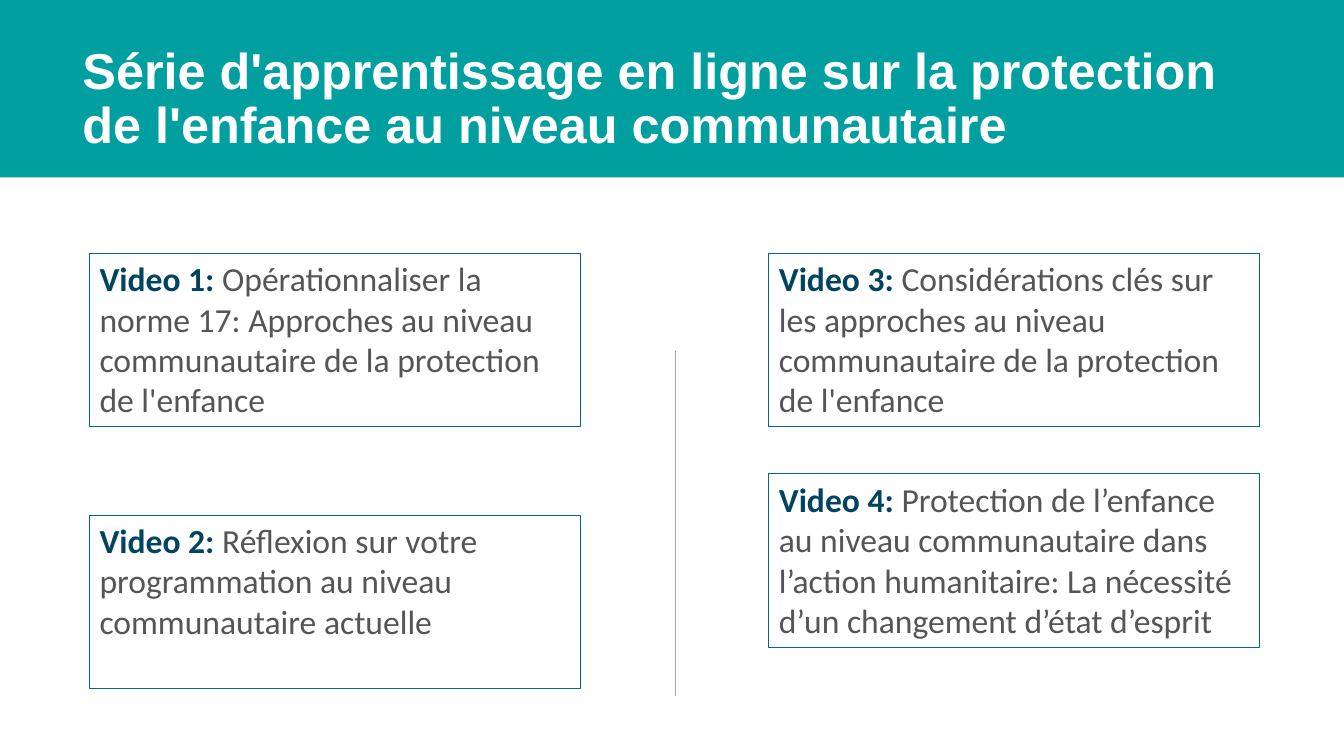
from dataclasses import dataclass

from lxml import etree
from pptx import Presentation
from pptx.dml.color import RGBColor
from pptx.enum.shapes import MSO_CONNECTOR, MSO_SHAPE
from pptx.enum.text import MSO_ANCHOR, PP_ALIGN
from pptx.oxml.ns import qn
from pptx.shapes.autoshape import Shape
from pptx.slide import Slide
from pptx.text.text import TextFrame
from pptx.util import Cm, Pt

RECTANGLE = MSO_SHAPE.RECTANGLE
STRAIGHT = MSO_CONNECTOR.STRAIGHT
TOP = MSO_ANCHOR.TOP
MIDDLE = MSO_ANCHOR.MIDDLE
LEFT = PP_ALIGN.LEFT


@dataclass(frozen=True)
class Theme:
    band: RGBColor = RGBColor.from_string("029FA0")
    heading: RGBColor = RGBColor.from_string("FFFFFF")
    border: RGBColor = RGBColor.from_string("026694")
    label: RGBColor = RGBColor.from_string("014462")
    body: RGBColor = RGBColor.from_string("545554")
    divider: RGBColor = RGBColor.from_string("A6A6A6")
    heading_font: str = "Arial"
    body_font: str = "Calibri"
    heading_size: int = 36
    body_size: int = 24


@dataclass(frozen=True)
class Video:
    number: int
    title: str
    left: float
    top: float


THEME = Theme()
SLIDE_WIDTH, SLIDE_HEIGHT = 33.87, 19.05
BAND_HEIGHT = 4.47
CARD_WIDTH, CARD_HEIGHT = 12.37, 4.37
LEFT_COLUMN, RIGHT_COLUMN = 2.26, 19.38
FIRST_ROW = 6.38
HEADING = (
    "Série d'apprentissage en ligne sur la protection "
    "de l'enfance au niveau communautaire"
)
VIDEOS = [
    Video(
        1,
        "Opérationnaliser la norme 17: Approches au niveau communautaire "
        "de la protection de l'enfance",
        LEFT_COLUMN,
        FIRST_ROW,
    ),
    Video(
        2,
        "Réflexion sur votre programmation au niveau communautaire actuelle",
        LEFT_COLUMN,
        12.98,
    ),
    Video(
        3,
        "Considérations clés sur les approches au niveau communautaire "
        "de la protection de l'enfance",
        RIGHT_COLUMN,
        FIRST_ROW,
    ),
    Video(
        4,
        "Protection de l’enfance au niveau communautaire dans l’action "
        "humanitaire: La nécessité d’un changement d’état d’esprit",
        RIGHT_COLUMN,
        11.94,
    ),
]


def write(
    frame: TextFrame,
    text: str,
    *,
    font: str,
    size: int,
    color: RGBColor,
    bold: bool = False,
    spacing: float = 1.0,
) -> None:
    paragraph = frame.paragraphs[0]
    paragraph.alignment = LEFT
    paragraph.line_spacing = spacing
    run = paragraph.add_run()
    run.text = text
    run.font.name = font
    run.font.size = Pt(size)
    run.font.bold = bold
    run.font.color.rgb = color


def add_rectangle(
    slide: Slide, left: float, top: float, width: float, height: float
) -> Shape:
    rectangle = slide.shapes.add_shape(
        RECTANGLE, Cm(left), Cm(top), Cm(width), Cm(height)
    )
    rectangle.shadow.inherit = False
    return rectangle


def add_heading(slide: Slide) -> None:
    band = add_rectangle(slide, 0, 0, SLIDE_WIDTH, BAND_HEIGHT)
    band.fill.solid()
    band.fill.fore_color.rgb = THEME.band
    band.line.fill.background()
    heading = slide.shapes.add_textbox(Cm(1.83), Cm(0.69), Cm(29.21), Cm(3.68))
    frame = heading.text_frame
    frame.word_wrap = True
    frame.vertical_anchor = MIDDLE
    write(
        frame,
        HEADING,
        font=THEME.heading_font,
        size=THEME.heading_size,
        color=THEME.heading,
        bold=True,
        spacing=0.9,
    )


def add_divider(slide: Slide) -> None:
    divider = slide.shapes.add_connector(
        STRAIGHT, Cm(17.02), Cm(8.84), Cm(17.02), Cm(17.53)
    )
    divider.line.color.rgb = THEME.divider
    divider.line.width = Pt(0.5)
    etree.SubElement(divider.element.spPr, qn("a:effectLst"))


def add_video(slide: Slide, video: Video) -> None:
    card = add_rectangle(slide, video.left, video.top, CARD_WIDTH, CARD_HEIGHT)
    card.fill.background()
    card.line.color.rgb = THEME.border
    card.line.width = Pt(0.75)
    frame = card.text_frame
    frame.word_wrap = True
    frame.vertical_anchor = TOP
    for text, color, bold in (
        (f"Video {video.number}: ", THEME.label, True),
        (video.title, THEME.body, False),
    ):
        write(
            frame,
            text,
            font=THEME.body_font,
            size=THEME.body_size,
            color=color,
            bold=bold,
        )


def main() -> None:
    presentation = Presentation()
    presentation.slide_width = Cm(SLIDE_WIDTH)
    presentation.slide_height = Cm(SLIDE_HEIGHT)
    slide = presentation.slides.add_slide(presentation.slide_layouts[6])
    add_heading(slide)
    add_divider(slide)
    for video in VIDEOS:
        add_video(slide, video)
    presentation.save("out.pptx")


if __name__ == "__main__":
    main()
